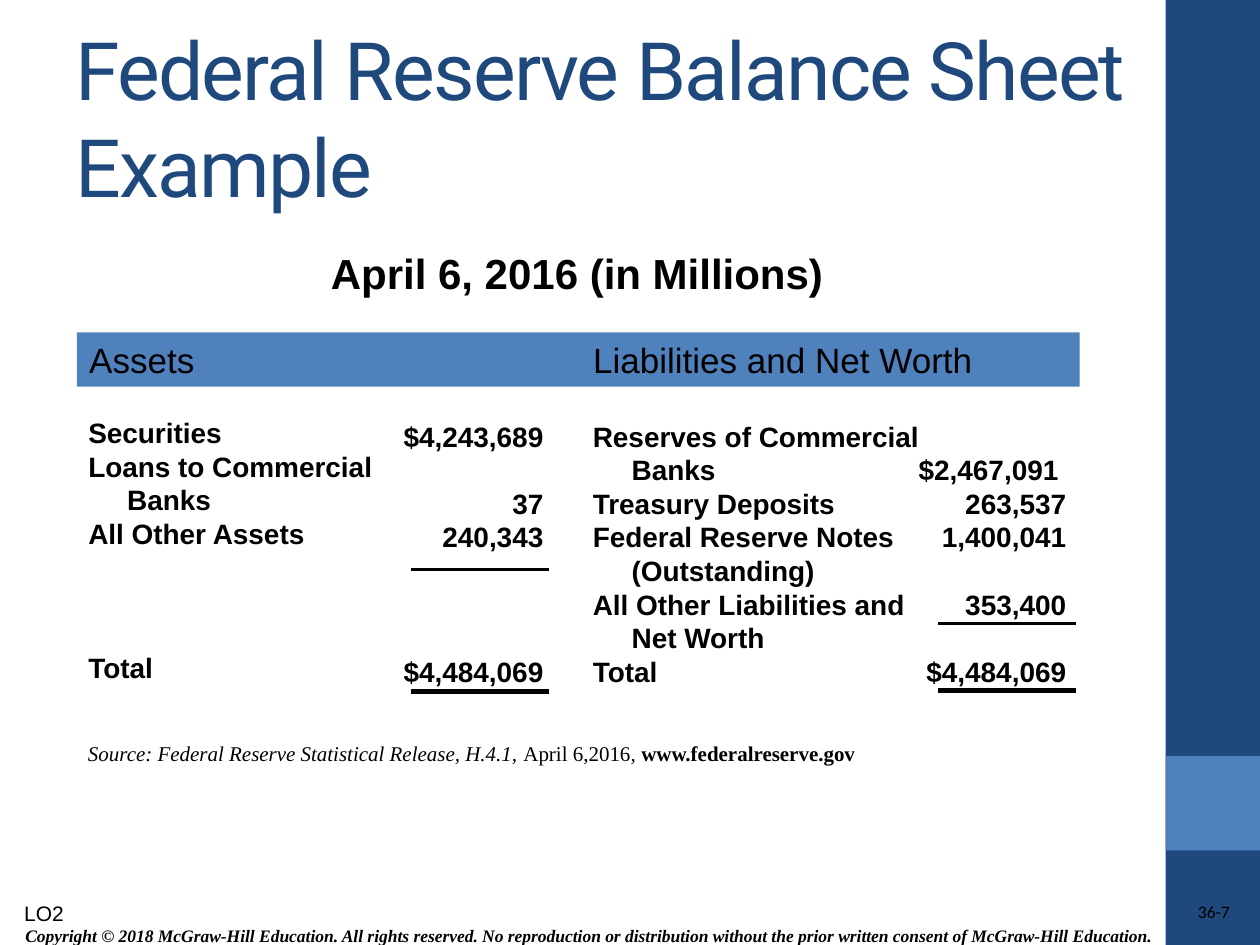
from pptx import Presentation
from pptx.dml.color import RGBColor
from pptx.enum.shapes import MSO_CONNECTOR, MSO_SHAPE
from pptx.enum.text import MSO_ANCHOR as Anchor, PP_ALIGN as Align
from pptx.oxml.ns import qn
from pptx.util import Pt
from lxml.etree import SubElement

TITLE = "Federal Reserve Balance Sheet Example"
DATE = "April 6, 2016 (in Millions)"
HEADINGS = "Assets\tLiabilities and Net Worth"
SOURCE = [("Source: Federal Reserve Statistical Release, H.4.1, ", "italic"),
          ("April 6,2016", "plain"), (", ", "italic"),
          ("www.federalreserve.gov", "strong")]
OBJECTIVE = "LO2"
PAGE = "36-7"
COPYRIGHT = ("Copyright © 2018 McGraw-Hill Education. All rights reserved. "
             "No reproduction or distribution without the prior written consent "
             "of McGraw-Hill Education.")

# Each entry is (ledger line, text); a leading ">" marks an indented continuation.
ASSETS = [(0, "Securities"), (1, "Loans to Commercial"), (2, ">Banks"),
          (3, "All Other Assets"), (7, "Total")]
ASSET_AMOUNTS = [(0, "$4,243,689"), (2, "37"), (3, "240,343"), (7, "$4,484,069")]
LIABILITIES = [(0, "Reserves of Commercial"), (1, ">Banks"), (2, "Treasury Deposits"),
               (3, "Federal Reserve Notes"), (4, ">(Outstanding)"),
               (5, "All Other Liabilities and"), (6, ">Net Worth"), (7, "Total")]
LIABILITY_AMOUNTS = [(1, "$2,467,091 "), (2, "263,537"), (3, "1,400,041"),
                     (5, "353,400"), (7, "$4,484,069")]

NAVY, BLUE, BLACK = (RGBColor.from_string(c) for c in ("1F497D", "4F81BD", "000000"))
THEME = {
    "title": {"name": "Roboto", "size": Pt(46), "color": NAVY},
    "date": {"name": "Arial", "size": Pt(24), "bold": True},
    "heading": {"name": "Arial", "size": Pt(20)},
    "ledger": {"name": "Arial", "size": Pt(16), "bold": True},
    "objective": {"name": "Arial", "size": Pt(12)},
    "italic": {"name": "Times New Roman", "size": Pt(12), "italic": True},
    "plain": {"name": "Times New Roman", "size": Pt(12)},
    "strong": {"name": "Times New Roman", "size": Pt(12), "bold": True},
    "page": {"name": "Calibri", "size": Pt(10)},
    "copyright": {"name": "Times New Roman", "size": Pt(10), "bold": True, "italic": True},
}
LINE_PITCH = 19.2
INDENT = 22.2
LEDGER_TOP = 236
SIDEBAR_LEFT = 666

# Columns: entries, left, top, width, alignment
COLUMNS = [(ASSETS, 43.4, LEDGER_TOP - 2, 177, Align.LEFT),
           (ASSET_AMOUNTS, 219, LEDGER_TOP, 98.6, Align.RIGHT),
           (LIABILITIES, 331.7, LEDGER_TOP, 202, Align.LEFT),
           (LIABILITY_AMOUNTS, 511, LEDGER_TOP, 105.3, Align.RIGHT)]
# Rules: left, height on the slide, weight
RULE_WIDTH = 79.2
RULES = [(234.7, 325.4, 1.5), (234.7, 395.2, 3), (535.8, 356.4, 1.5), (535.8, 394.4, 3)]


def style(font, role):
    for key, setting in {"color": BLACK, **THEME[role]}.items():
        if key == "color":
            font.color.rgb = setting
        else:
            setattr(font, key, setting)


def add_run(paragraph, text, role):
    run = paragraph.add_run()
    run.text = text
    style(run.font, role)
    return run


def add_box(slide, left, top, width, height, wrap=True, anchor=Anchor.TOP):
    frame = slide.shapes.add_textbox(Pt(left), Pt(top), Pt(width), Pt(height)).text_frame
    frame.word_wrap = wrap
    frame.vertical_anchor = anchor
    return frame


def add_line_of_text(slide, text, role, box, align=Align.LEFT, anchor=Anchor.TOP):
    frame = add_box(slide, *box, anchor=anchor)
    paragraph = frame.paragraphs[0]
    paragraph.alignment = align
    return frame, add_run(paragraph, text, role)


def add_bar(slide, left, top, width, height, color):
    bar = slide.shapes.add_shape(MSO_SHAPE.RECTANGLE, Pt(left), Pt(top), Pt(width), Pt(height))
    bar.shadow.inherit = False
    bar.fill.solid()
    bar.fill.fore_color.rgb = color
    bar.line.fill.background()
    return bar


def add_column(slide, entries, left, top, width, align):
    """Set entries on the ledger lines; skipped lines become space before."""
    first = entries[0][0]
    frame = add_box(slide, left, top + first * LINE_PITCH, width,
                    (8 - first) * LINE_PITCH + 7.2)
    previous = first - 1
    for line, text in entries:
        paragraph = frame.paragraphs[0] if line == first else frame.add_paragraph()
        paragraph.alignment = align
        paragraph.line_spacing = Pt(LINE_PITCH)
        paragraph.space_before = Pt((line - previous - 1) * LINE_PITCH)
        if text.startswith(">"):
            paragraph._p.get_or_add_pPr().set("marL", str(Pt(INDENT)))
        add_run(paragraph, text.lstrip(">"), "ledger")
        previous = line


def add_rule(slide, left, y, weight):
    rule = slide.shapes.add_connector(MSO_CONNECTOR.STRAIGHT, Pt(left), Pt(y),
                                      Pt(left + RULE_WIDTH), Pt(y))
    rule.line.color.rgb = BLACK
    rule.line.width = Pt(weight)
    SubElement(rule._element.spPr, qn("a:effectLst"))


def add_headings(slide):
    frame = add_bar(slide, 43.9, 190, 573.1, 31, BLUE).text_frame
    frame.vertical_anchor = Anchor.MIDDLE
    paragraph = frame.paragraphs[0]
    paragraph.alignment = Align.LEFT
    tabs = SubElement(paragraph._p.get_or_add_pPr(), qn("a:tabLst"))
    SubElement(tabs, qn("a:tab"), pos=str(Pt(288)), algn="l")
    add_run(paragraph, HEADINGS, "heading")


def main():
    deck = Presentation()
    deck.slide_width, deck.slide_height = Pt(720), Pt(540)
    slide = deck.slides.add_slide(deck.slide_layouts[6])

    add_bar(slide, SIDEBAR_LEFT, 0, 54, 540, NAVY)
    add_bar(slide, SIDEBAR_LEFT, 432, 54, 54, BLUE)
    add_line_of_text(slide, COPYRIGHT, "copyright", (4.3, 524.2, 663.8, 20.2),
                     Align.CENTER, Anchor.MIDDLE)
    page, _ = add_line_of_text(slide, PAGE, "page", (562.3, 514.8, 140.4, 14.4), Align.RIGHT)
    for side in ("left", "top", "right", "bottom"):
        setattr(page, f"margin_{side}", 0)

    _, title = add_line_of_text(slide, TITLE, "title", (36, 21.6, 626.4, 90),
                                anchor=Anchor.MIDDLE)
    title._r.get_or_add_rPr().set("spc", "-100")
    date, _ = add_line_of_text(slide, DATE, "date", (43.2, 142.6, 573.1, 31.7), Align.CENTER)
    date.paragraphs[0].line_spacing = 0.85

    add_headings(slide)
    for column in COLUMNS:
        add_column(slide, *column)
    for rule in RULES:
        add_rule(slide, *rule)

    source = add_box(slide, 43.2, 419.8, 458.6, 21.6, wrap=False).paragraphs[0]
    for text, role in SOURCE:
        add_run(source, text, role)
    add_line_of_text(slide, OBJECTIVE, "objective", (0, 511.2, 50.4, 21.6), Align.CENTER)
    deck.save("out.pptx")


if __name__ == "__main__":
    main()
